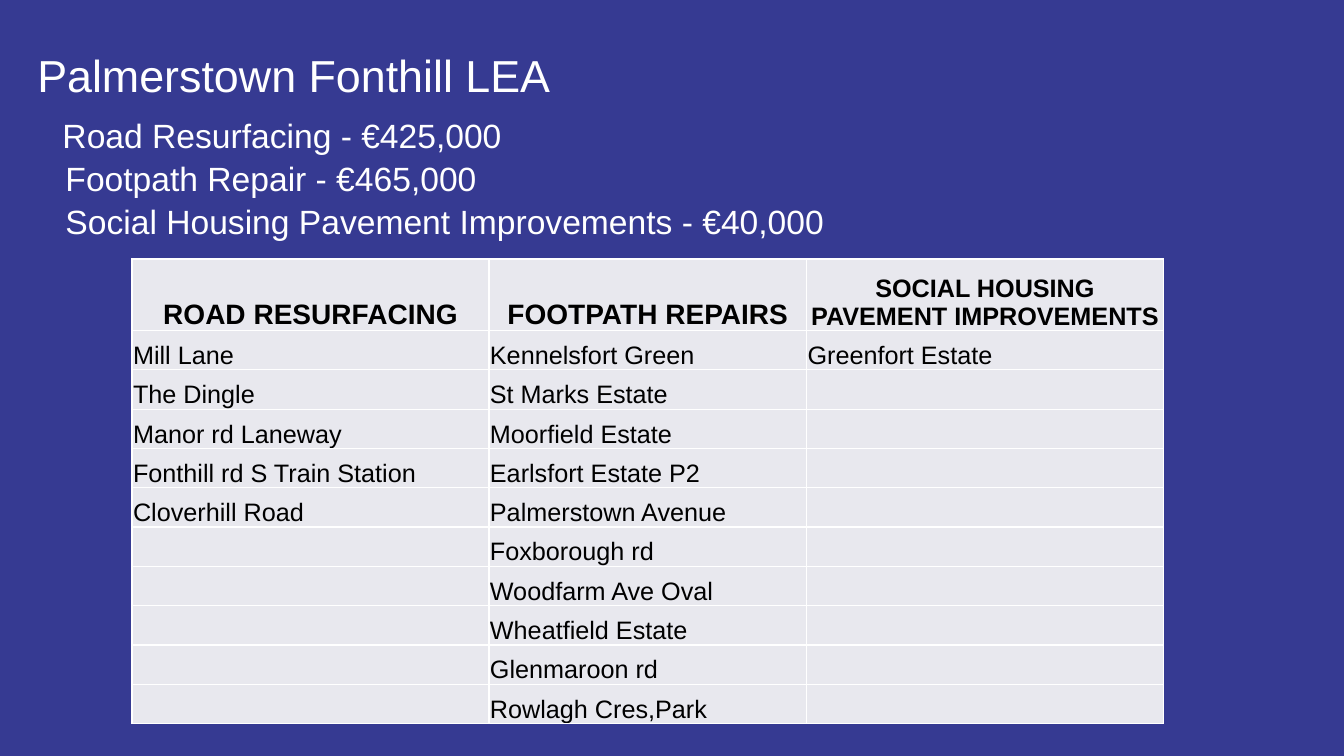
import itertools

import lxml.etree
import pptx
import pptx.dml.color
import pptx.enum.text
import pptx.oxml.ns
import pptx.util

Inches, Pt = pptx.util.Inches, pptx.util.Pt
RGB = pptx.dml.color.RGBColor.from_string

# Content
# Heading lines: text, size role, left indent (in), space before (pt)
HEADING = [
    ("Palmerstown Fonthill LEA", "title", 0, 0),
    ("Road Resurfacing - €425,000", "budget", 0.25, 7.4),
    ("Footpath Repair - €465,000", "budget", 0.28, 0),
    ("Social Housing Pavement Improvements - €40,000", "budget", 0.28, 0),
]
# Works programme: column title, size role, width (in), places
PROGRAMME = [
    ("ROAD RESURFACING", "header", 3.54,
     ["Mill Lane", "The Dingle", "Manor rd Laneway",
      "Fonthill rd S Train Station", "Cloverhill Road"]),
    ("FOOTPATH REPAIRS", "header", 3.15,
     ["Kennelsfort Green", "St Marks Estate", "Moorfield Estate",
      "Earlsfort Estate P2", "Palmerstown Avenue", "Foxborough rd",
      "Woodfarm Ave Oval", "Wheatfield Estate", "Glenmaroon rd",
      "Rowlagh Cres,Park"]),
    ("SOCIAL HOUSING PAVEMENT IMPROVEMENTS", "body", 3.54,
     ["Greenfort Estate"]),
]
THEME = {
    "font": "Arial",
    "background": "363A92", "heading": "FFFFFF",
    "cell": "E8E8EE", "ink": "000000", "border": "FFFFFF",
    "title": 32, "budget": 24, "header": 20, "body": 18,
}
HEADER_HEIGHT, ROW_HEIGHT = 0.71, 0.39


def style(paragraph, size, color, bold=False):
    for run in paragraph.runs:
        run.font.name = THEME["font"]
        run.font.size = Pt(THEME[size])
        run.font.color.rgb = RGB(THEME[color])
        run.font.bold = bold


def add_borders(cell):
    """Put the four side lines ahead of the cell's fill."""
    qn = pptx.oxml.ns.qn
    properties = cell._tc.get_or_add_tcPr()
    for position, side in enumerate(("lnL", "lnR", "lnT", "lnB")):
        line = lxml.etree.Element(qn("a:" + side), w=str(Pt(1)))
        fill = lxml.etree.SubElement(line, qn("a:solidFill"))
        lxml.etree.SubElement(fill, qn("a:srgbClr"), val=THEME["border"])
        properties.insert(position, line)


def fill_cell(cell, text, size, is_header):
    cell.fill.solid()
    cell.fill.fore_color.rgb = RGB(THEME["cell"])
    cell.margin_left = cell.margin_right = cell.margin_top = Inches(0.01)
    cell.margin_bottom = 0
    cell.vertical_anchor = pptx.enum.text.MSO_ANCHOR.BOTTOM
    add_borders(cell)
    cell.text_frame.text = text
    paragraph = cell.text_frame.paragraphs[0]
    if is_header:
        paragraph.alignment = pptx.enum.text.PP_ALIGN.CENTER
    style(paragraph, size, "ink", is_header)


# Slide
deck = pptx.Presentation()
deck.slide_width, deck.slide_height = Inches(13.33), Inches(7.5)
slide = deck.slides.add_slide(deck.slide_layouts[6])
slide.background.fill.solid()
slide.background.fill.fore_color.rgb = RGB(THEME["background"])

# Heading with budgets
heading = slide.shapes.add_textbox(
    Inches(0.37), Inches(0.44), Inches(9.06), Inches(1.73)).text_frame
heading.word_wrap = True
heading.margin_left = heading.margin_right = 0
heading.margin_top = heading.margin_bottom = 0
heading.text = "\n".join(line[0] for line in HEADING)
for paragraph, (_, size, indent, before) in zip(heading.paragraphs, HEADING):
    paragraph.line_spacing = 1.07
    paragraph.space_before = Pt(before)
    paragraph._p.get_or_add_pPr().set("marL", str(Inches(indent)))
    style(paragraph, size, "heading")

# Works programme table
place_rows = list(itertools.zip_longest(
    *(places for *_, places in PROGRAMME), fillvalue=""))
widths = [width for _, _, width, _ in PROGRAMME]
programme = slide.shapes.add_table(
    len(place_rows) + 1, len(PROGRAMME), Inches(1.31), Inches(2.57),
    Inches(sum(widths)),
    Inches(HEADER_HEIGHT + ROW_HEIGHT * len(place_rows))).table
programme.horz_banding = False
for row in programme.rows:
    row.height = Inches(ROW_HEIGHT)
programme.rows[0].height = Inches(HEADER_HEIGHT)
for column, (title, size, width, _) in enumerate(PROGRAMME):
    programme.columns[column].width = Inches(width)
    fill_cell(programme.cell(0, column), title, size, True)
    for row, places in enumerate(place_rows, start=1):
        fill_cell(programme.cell(row, column), places[column], "body", False)

deck.save("out.pptx")
